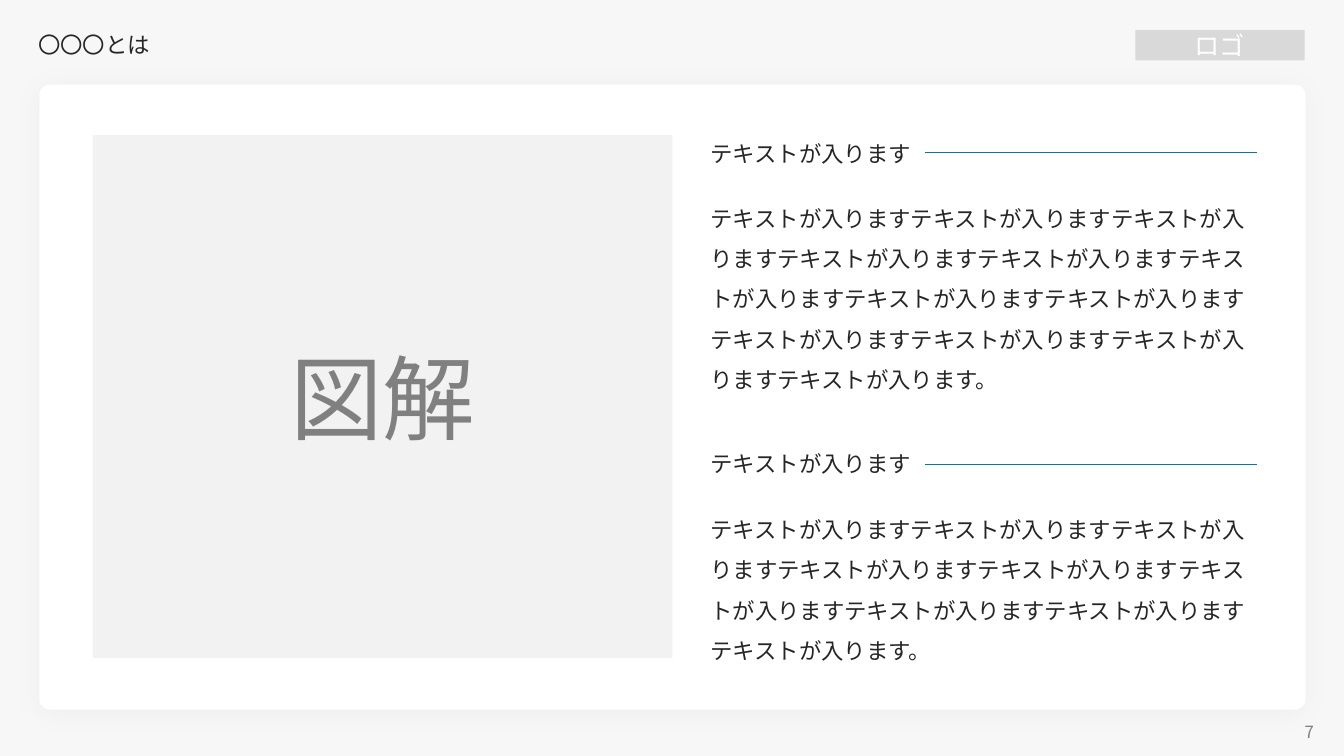
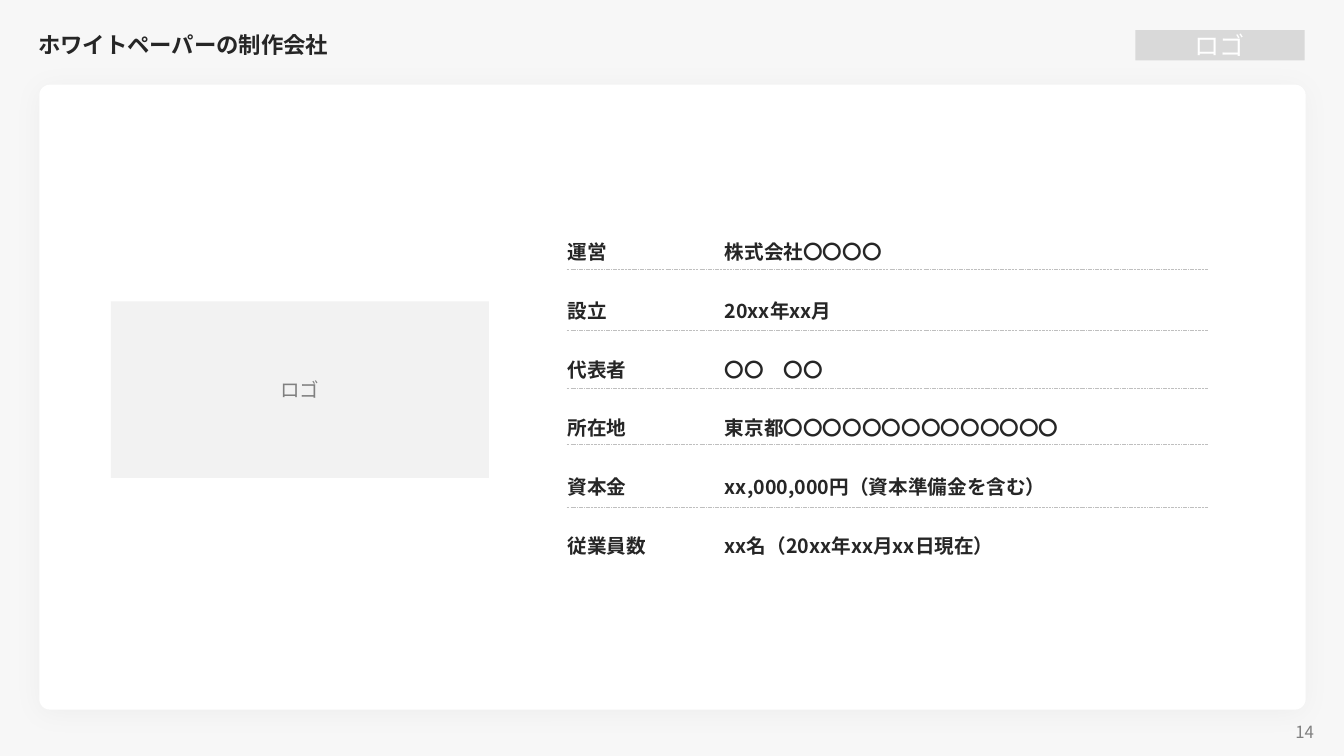
from lxml import etree
from pptx import Presentation
from pptx.dml.color import RGBColor
from pptx.enum.dml import MSO_LINE
from pptx.enum.lang import MSO_LANGUAGE_ID as LANGUAGE
from pptx.enum.shapes import MSO_CONNECTOR, MSO_SHAPE
from pptx.enum.text import MSO_ANCHOR as ANCHOR, PP_ALIGN as ALIGN
from pptx.oxml.ns import qn
from pptx.util import Inches, Pt

BACKDROP = RGBColor(0xF7, 0xF7, 0xF7)
WHITE = RGBColor(0xFF, 0xFF, 0xFF)
INK = RGBColor(0x26, 0x26, 0x26)
MUTED = RGBColor(0x80, 0x80, 0x80)
PANEL = RGBColor(0xF2, 0xF2, 0xF2)
BADGE = RGBColor(0xD9, 0xD9, 0xD9)
RULE = RGBColor(0xBF, 0xBF, 0xBF)
ACCENT = RGBColor(0x0B, 0x76, 0xA0)
BODY_FONT = "Noto Sans CJK JP"
PANEL_FONT = "Karla"


class Deck:
    """Holds the shared style and the current slide."""

    def __init__(self):
        self.prs = Presentation()
        self.prs.slide_width = Inches(13.33)
        self.prs.slide_height = Inches(7.5)
        self.slide = None

    def page(self, title, number, bold=False):
        self.slide = self.prs.slides.add_slide(self.prs.slide_layouts[6])
        backdrop = self.slide.background.fill
        backdrop.solid()
        backdrop.fore_color.rgb = BACKDROP
        self.card(0.39, 0.84, 12.56, 6.2)
        self.text([str(number)], 10.02, 7.14, 3.11, 0.24, size=12, color=MUTED,
                  align=ALIGN.RIGHT, anchor=ANCHOR.MIDDLE)
        self.panel("ロゴ", 11.26, 0.3, 1.68, 0.3, 18, BADGE, WHITE, BODY_FONT)
        self.text([title], 0.28, 0.25, 10, 0.41, bold=bold, spacing=0.9,
                  anchor=ANCHOR.MIDDLE)

    def shape(self, kind, left, top, width, height, fill):
        shape = self.slide.shapes.add_shape(
            kind, Inches(left), Inches(top), Inches(width), Inches(height))
        shape.shadow.inherit = False
        shape.fill.solid()
        shape.fill.fore_color.rgb = fill
        shape.line.fill.background()
        return shape

    def card(self, left, top, width, height):
        card = self.shape(MSO_SHAPE.ROUNDED_RECTANGLE, left, top, width, height, WHITE)
        card.adjustments[0] = 0.017
        effects = card._element.spPr.find(qn("a:effectLst"))
        shadow = etree.SubElement(
            effects, qn("a:outerShdw"), blurRad=str(Pt(20)), dist=str(Pt(3)),
            dir="5400000", algn="t", rotWithShape="0")
        tint = etree.SubElement(shadow, qn("a:srgbClr"), val="000000")
        etree.SubElement(tint, qn("a:alpha"), val="3000")

    def panel(self, label, left, top, width, height, size, fill=PANEL,
              color=MUTED, font=PANEL_FONT):
        panel = self.shape(MSO_SHAPE.RECTANGLE, left, top, width, height, fill)
        self.fill_text(panel.text_frame, [label], size, color, font=font,
                       align=ALIGN.CENTER, anchor=ANCHOR.MIDDLE)

    def text(self, lines, left, top, width, height, size=16, color=INK, **style):
        box = self.slide.shapes.add_textbox(
            Inches(left), Inches(top), Inches(width), Inches(height))
        self.fill_text(box.text_frame, lines, size, color, **style)

    def fill_text(self, frame, lines, size, color, font=BODY_FONT, bold=False,
                  spacing=1.0, align=ALIGN.LEFT, anchor=ANCHOR.TOP):
        frame.word_wrap = True
        frame.vertical_anchor = anchor
        frame.text = "\n".join(lines)
        for paragraph in frame.paragraphs:
            paragraph.alignment = align
            paragraph.line_spacing = spacing
            for run in paragraph.runs:
                run.font.size = Pt(size)
                run.font.bold = bold
                run.font.color.rgb = color
                run.font.name = font
                run.font.language_id = LANGUAGE.JAPANESE
                etree.SubElement(run.font._element, qn("a:ea"), typeface=BODY_FONT)

    def rule(self, left, right, y, color, dash=None):
        rule = self.slide.shapes.add_connector(
            MSO_CONNECTOR.STRAIGHT, Inches(left), Inches(y), Inches(right), Inches(y))
        rule.line.color.rgb = color
        rule.line.width = Pt(0.25)
        if dash:
            rule.line.dash_style = dash
        etree.SubElement(rule._element.spPr, qn("a:effectLst"))

    def section(self, top, rule_y, body_top, body_height, repeats):
        phrase = "テキストが入ります"
        self.text([phrase], 6.95, top, 5.51, 0.37)
        self.rule(9.17, 12.47, rule_y, ACCENT)
        self.text([phrase * repeats + "。"], 6.95, body_top, 5.51, body_height,
                  spacing=1.5)


def main():
    deck = Deck()

    deck.page("〇〇〇とは", 7)
    deck.panel("図解", 0.92, 1.34, 5.75, 5.19, 66)
    deck.section(1.34, 1.51, 1.85, 2.07, 12)
    deck.section(4.42, 4.61, 4.94, 1.67, 9)

    deck.page("ホワイトペーパーの制作会社", 14, bold=True)
    deck.panel("ロゴ", 1.1, 2.99, 3.75, 1.75, 14)
    profile = {
        "運営": "株式会社〇〇〇〇",
        "設立": "20xx年xx月",
        "代表者": "〇〇　〇〇",
        "所在地": "東京都〇〇〇〇〇〇〇〇〇〇〇〇〇〇",
        "資本金": "xx,000,000円（資本準備金を含む）",
        "従業員数": "xx名（20xx年xx月xx日現在）",
    }
    for column, left, width in ((profile.keys(), 5.53, 1.25),
                                (profile.values(), 7.09, 4.97)):
        deck.text(column, left, 1.98, width, 3.54, size=14, bold=True, spacing=2.5)
    for y in (2.67, 3.28, 3.85, 4.41, 5.03):
        deck.rule(5.62, 11.98, y, RULE, MSO_LINE.DASH_DOT_DOT)

    deck.prs.save("out.pptx")


if __name__ == "__main__":
    main()
